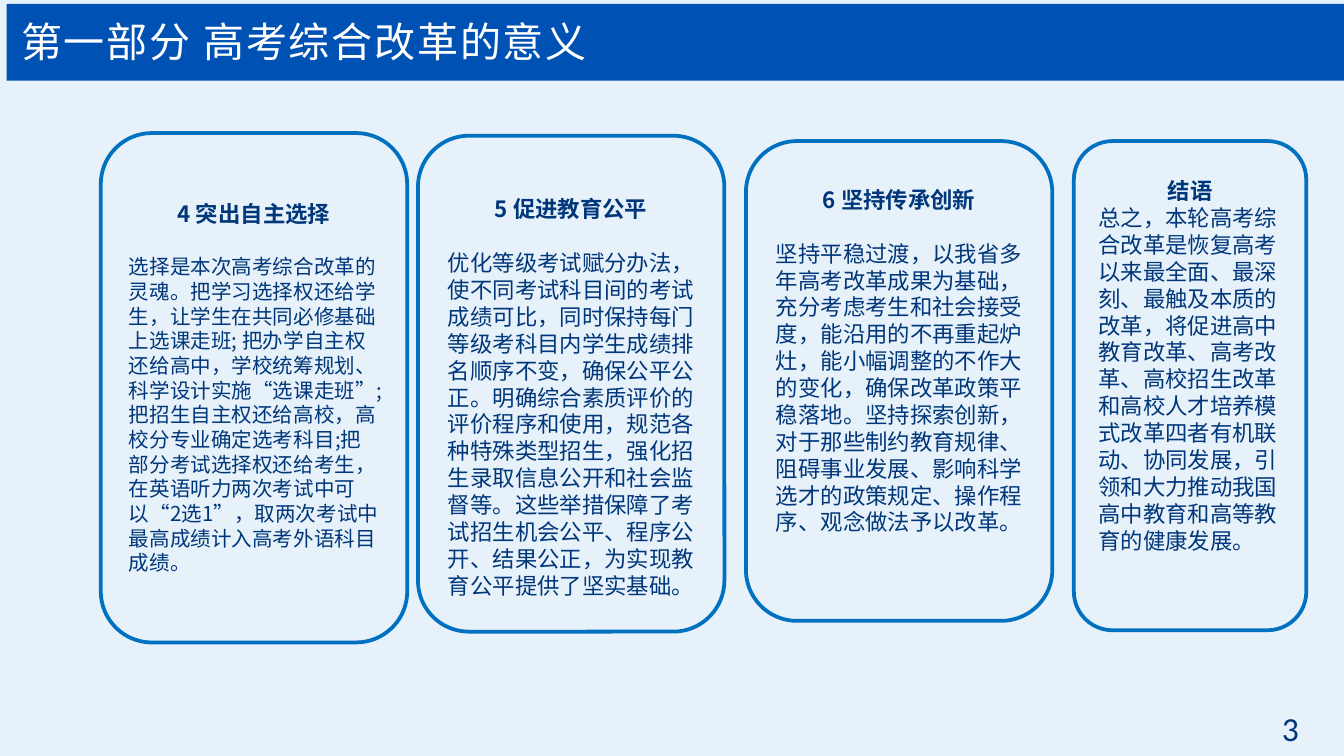
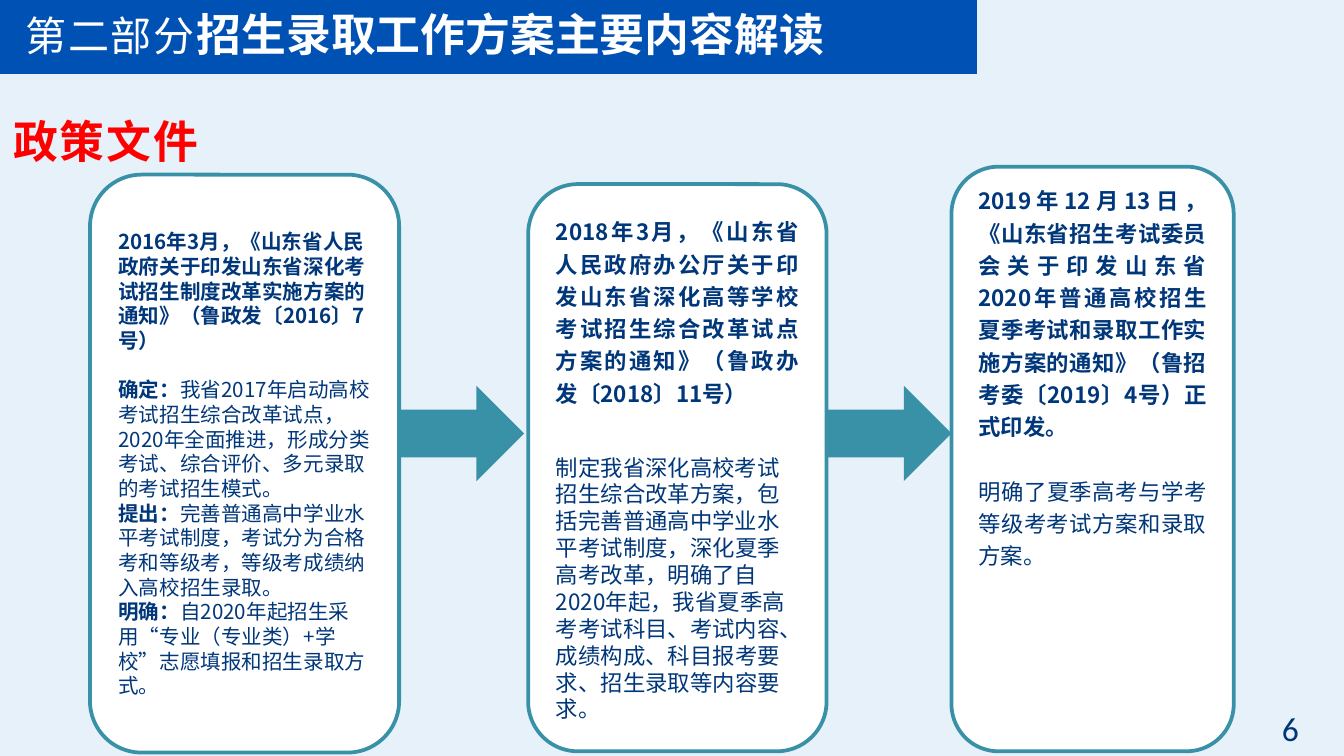
import pptx
import pptx.util
import pptx.dml.color
import pptx.enum.shapes
import pptx.enum.text
import pptx.oxml.ns
from lxml import etree

Inches, Pt = pptx.util.Inches, pptx.util.Pt
SHAPE = pptx.enum.shapes.MSO_SHAPE
ALIGN = pptx.enum.text.PP_ALIGN
MIDDLE = pptx.enum.text.MSO_ANCHOR.MIDDLE
LEFT, CENTER, JUSTIFY = ALIGN.LEFT, ALIGN.CENTER, ALIGN.JUSTIFY

FONT, NUMBER_FONT = "Noto Sans CJK SC", "Calibri"
BACKGROUND, BAND, NAVY, WHITE, RED = "E7F1FA", "0051B4", "00377A", "FFFFFF", "FF0000"
BLUE, TEAL = "0070C0", "3891A7"
INSET = 0.05
LOOSE = 1.44  # line pitch as a multiple of the text size
NORMAL = 1.2
ARROW_TOP, ARROW_WIDTH, ARROW_HEIGHT = 2.87, 0.94, 0.71

# Paragraph: alignment, size, line pitch, space before, [(text, bold), ...]
# Card: (left, top, width, height), inset above, inset below, paragraphs
MEANING_CARDS = [
    ((0.75, 0.99, 2.28, 3.79), INSET, INSET, [
        (CENTER, 12, NORMAL, 0, [("4 突出自主选择", True)]),
        (LEFT, 11, NORMAL, 14.4, [(
            "选择是本次高考综合改革的灵魂。把学习选择权还给学生，让学生在共同必修基础上选课走班; "
            "把办学自主权还给高中，学校统筹规划、科学设计实施“选课走班”;"
            "把招生自主权还给高校，高校分专业确定选考科目;"
            "把部分考试选择权还给考生，在英语听力两次考试中可以“2选1”，"
            "取两次考试中最高成绩计入高考外语科目成绩。", False)]),
    ]),
    ((3.11, 1.01, 2.28, 3.69), 0.25, INSET, [
        (CENTER, 12, NORMAL, 0, [("5 促进教育公平", True)]),
        (CENTER, 12, NORMAL, 14.4, [(
            "优化等级考试赋分办法，使不同考试科目间的考试成绩可比，"
            "同时保持每门等级考科目内学生成绩排名顺序不变，确保公平公正。"
            "明确综合素质评价的评价程序和使用，规范各种特殊类型招生，"
            "强化招生录取信息公开和社会监督等。"
            "这些举措保障了考试招生机会公平、程序公开、结果公正，"
            "为实现教育公平提供了坚实基础。", False)]),
    ]),
    ((5.55, 1.05, 2.28, 3.57), INSET, 0.35, [
        (CENTER, 12, NORMAL, 0, [("6 坚持传承创新", True)]),
        (CENTER, 12, NORMAL, 14.4, [(
            "坚持平稳过渡，以我省多年高考改革成果为基础，充分考虑考生和社会接受度，"
            "能沿用的不再重起炉灶，能小幅调整的不作大的变化，确保改革政策平稳落地。"
            "坚持探索创新，对于那些制约教育规律、阻碍事业发展、"
            "影响科学选才的政策规定、操作程序、观念做法予以改革。", False)]),
    ]),
    ((7.99, 1.05, 1.73, 3.64), INSET, 0.35, [
        (CENTER, 12, NORMAL, 0, [("结语", True)]),
        (LEFT, 12, NORMAL, 0, [(
            "总之，本轮高考综合改革是恢复高考以来最全面、最深刻、最触及本质的改革，"
            "将促进高中教育改革、高考改革、高校招生改革和高校人才培养模式改革"
            "四者有机联动、协同发展，引领和大力推动我国高中教育和高等教育的健康发展。", False)]),
    ]),
]

POLICY_CARDS = [
    ((0.67, 1.3, 2.3, 4.3), INSET, INSET, [
        (LEFT, 11, NORMAL, 0, [(
            "2016年3月，《山东省人民政府关于印发山东省深化考试招生制度改革实施方案的通知》"
            "（鲁政发〔2016〕7号）", True)]),
        (LEFT, 11, NORMAL, 13.2, [("确定：", True), (
            "我省2017年启动高校考试招生综合改革试点，2020年全面推进，"
            "形成分类考试、综合评价、多元录取的考试招生模式。", False)]),
        (LEFT, 11, NORMAL, 0, [("提出：", True), (
            "完善普通高中学业水平考试制度，考试分为合格考和等级考，"
            "等级考成绩纳入高校招生录取。", False)]),
        (LEFT, 11, NORMAL, 0, [("明确：", True), (
            "自2020年起招生采用“专业（专业类）+学校”志愿填报和招生录取方式。", False)]),
    ]),
    ((3.93, 1.37, 2.22, 4.22), INSET, INSET, [
        (JUSTIFY, 12, LOOSE, 0, [(
            "2018年3月，《山东省人民政府办公厅关于印发山东省深化高等学校考试招生"
            "综合改革试点方案的通知》（鲁政办发〔2018〕11号）", True)]),
        (LEFT, 12, NORMAL, 25.2, [(
            "制定我省深化高校考试招生综合改革方案，包括完善普通高中学业水平考试制度，"
            "深化夏季高考改革，明确了自2020年起，我省夏季高考考试科目、考试内容、"
            "成绩构成、科目报考要求、招生录取等内容要求。", False)]),
    ]),
    ((7.08, 1.24, 2.1, 4.35), 0, 1.24, [
        (JUSTIFY, 12, LOOSE, 0, [(
            "2019年12月13日，《山东省招生考试委员会关于印发山东省2020年普通高校招生"
            "夏季考试和录取工作实施方案的通知》（鲁招考委〔2019〕4号）正式印发。", True)]),
        (JUSTIFY, 12, LOOSE, 17.3, [(
            "明确了夏季高考与学考等级考考试方案和录取方案。", False)]),
    ]),
]


def rgb(value):
    return pptx.dml.color.RGBColor.from_string(value)


def add_run(p, text, size, color=NAVY, bold=False, font=FONT, spacing=0):
    r = p.add_run()
    r.text = text
    r.font.size, r.font.bold = Pt(size), bold
    r.font.color.rgb = rgb(color)
    r.font.name = font
    rpr = r.font._element
    etree.SubElement(rpr, pptx.oxml.ns.qn("a:ea")).set("typeface", font)
    if spacing:
        rpr.set("spc", str(spacing * 100))


def add_box(s, kind, box, fill=None, line=None):
    sp = s.shapes.add_shape(kind, *map(Inches, box))
    sp.shadow.inherit = False
    if fill:
        sp.fill.solid()
        sp.fill.fore_color.rgb = rgb(fill)
    else:
        sp.fill.background()
    if line:
        sp.line.color.rgb = rgb(line)
        sp.line.width = Pt(2)
    else:
        sp.line.fill.background()
    return sp


def add_label(s, box, wrap=True):
    """Add a one-line text box and return its paragraph."""
    tf = s.shapes.add_textbox(*map(Inches, box)).text_frame
    tf.word_wrap = wrap
    tf.vertical_anchor = MIDDLE
    return tf.paragraphs[0]


def add_card(s, card, line, fill=None):
    box, above, below, paragraphs = card
    tf = add_box(s, SHAPE.ROUNDED_RECTANGLE, box, fill, line).text_frame
    tf.word_wrap = True
    tf.vertical_anchor = MIDDLE
    tf.margin_top, tf.margin_bottom = Inches(above), Inches(below)
    for i, (align, size, pitch, gap, runs) in enumerate(paragraphs):
        p = tf.add_paragraph() if i else tf.paragraphs[0]
        p.alignment = align
        p.line_spacing = Pt(size * pitch)
        if gap:
            p.space_before = Pt(gap)
        for text, bold in runs:
            add_run(p, text, size, bold=bold)


def add_slide(prs, number, band, title_box, title, emphasis=""):
    s = prs.slides.add_slide(prs.slide_layouts[6])
    s.background.fill.solid()
    s.background.fill.fore_color.rgb = rgb(BACKGROUND)
    add_run(add_label(s, (9.44, 5.22, 0.5, 0.4), wrap=False), number, 18, font=NUMBER_FONT)
    add_box(s, SHAPE.RECTANGLE, band, BAND)
    p = add_label(s, title_box)
    add_run(p, title, 22, WHITE, spacing=1)
    if emphasis:
        add_run(p, emphasis, 24, WHITE, bold=True)
    return s


def add_arrow_after(s, card):
    left, _, width, _ = card[0]
    box = (left + width - 0.01, ARROW_TOP, ARROW_WIDTH, ARROW_HEIGHT)
    add_box(s, SHAPE.RIGHT_ARROW, box, TEAL)


def main():
    prs = pptx.Presentation()
    prs.slide_width = Inches(10)
    prs.slide_height = prs.slide_width * 9 // 16

    s = add_slide(prs, "3", (0.05, 0.03, 10, 0.57), (0.06, 0.07, 7.2, 0.47),
                  "第一部分 高考综合改革的意义")
    for card in MEANING_CARDS:
        add_card(s, card, BLUE)

    s = add_slide(prs, "6", (0, 0, 7.27, 0.55), (0.09, 0, 7.2, 0.5),
                  "第二部分", "招生录取工作方案主要内容解读")
    add_run(add_label(s, (0, 0.8, 2, 0.5)), "政策文件", 24, RED, bold=True, spacing=1)
    for card in POLICY_CARDS:
        add_card(s, card, TEAL, WHITE)
    for card in POLICY_CARDS[:-1]:
        add_arrow_after(s, card)

    prs.save("out.pptx")


if __name__ == "__main__":
    main()
